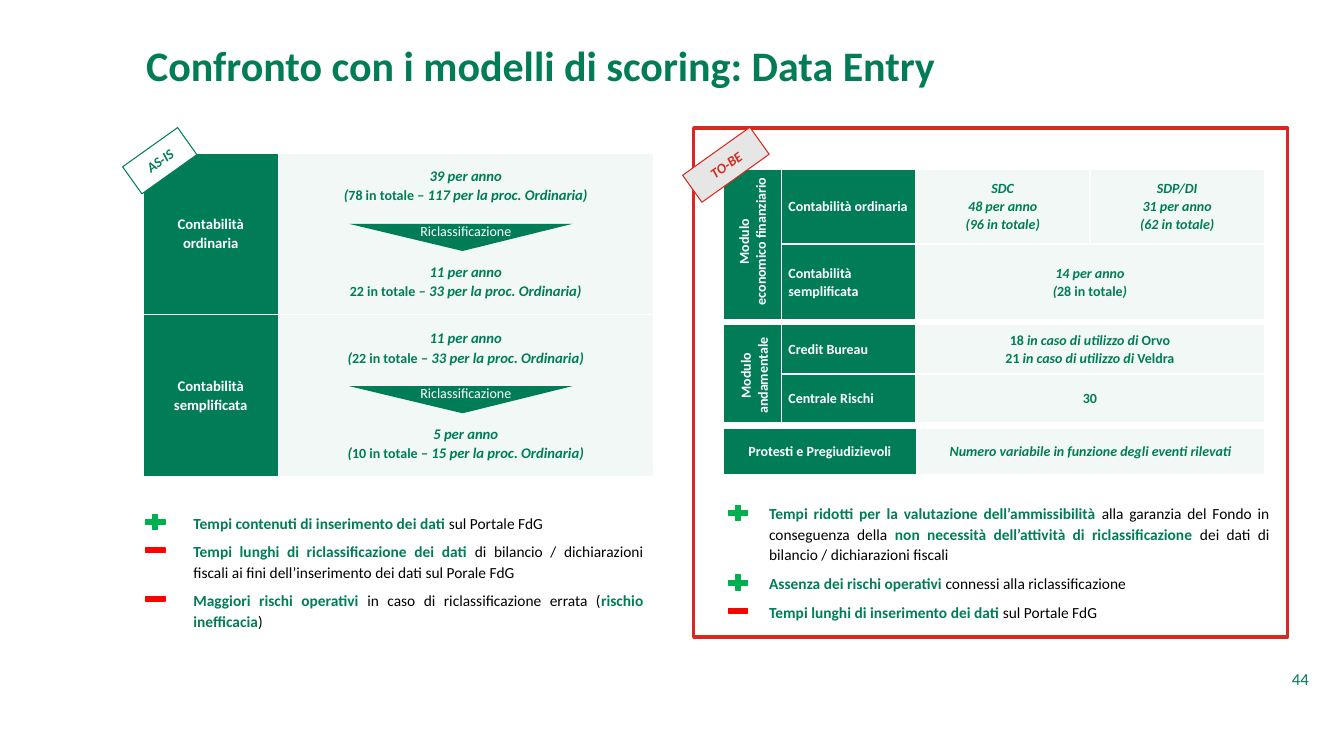
from lxml.etree import SubElement
from pptx import Presentation
from pptx.dml.color import RGBColor
from pptx.enum.shapes import MSO_SHAPE
from pptx.enum.text import MSO_ANCHOR, PP_ALIGN
from pptx.oxml.ns import qn
from pptx.util import Inches, Pt

RECTANGLE, TRIANGLE = MSO_SHAPE.RECTANGLE, MSO_SHAPE.ISOSCELES_TRIANGLE
PLUS, MINUS = MSO_SHAPE.MATH_PLUS, MSO_SHAPE.MATH_MINUS
TOP, MIDDLE, BOTTOM = MSO_ANCHOR.TOP, MSO_ANCHOR.MIDDLE, MSO_ANCHOR.BOTTOM
LEFT, CENTER = PP_ALIGN.LEFT, PP_ALIGN.CENTER
RIGHT, JUSTIFY = PP_ALIGN.RIGHT, PP_ALIGN.JUSTIFY

GREEN, WHITE, BLACK, RED = "007D57", "FFFFFF", "000000", "D52B1E"
THEME = {
    "font": "Calibri",
    "tag fill": "E7E6E6",
    "icons": {PLUS: "00B050", MINUS: "FF0000"},
    "tint": 5000,
    "styles": {
        "title": (30, GREEN, True, False),
        "page": (12, GREEN, False, False),
        "key": (11, GREEN, True, False),
        "body": (11, BLACK, False, False),
        "big head": (10.5, WHITE, True, False),
        "big value": (10.5, GREEN, True, True),
        "head": (10, WHITE, True, False),
        "value": (10, GREEN, True, True),
        "upright": (10, GREEN, True, False),
        "arrow": (10, WHITE, False, False),
        "as-is": (10, GREEN, True, True),
        "to-be": (10, RED, True, True),
    },
}

TITLE = "Confronto con i modelli di scoring: Data Entry"
PAGE = "44"


def lines(style, *texts):
    return [[(text, style)] for text in texts]


def yearly(before, total, after, open_mark="("):
    opening = [(open_mark, "big value")] if open_mark else []
    return [[(f"{before} per anno", "big value")],
            opening + [(f"{total} in totale ", "upright"),
                       (f"– {after} per la proc. Ordinaria)", "big value")]]


def usage(count, bureau):
    return [(count, "upright"), (" in caso di utilizzo di ", "value"), (bureau, "upright")]


TABLES = [
    {"at": (1.42, 1.51), "columns": (1.34, 3.72), "rows": (1.61, 1.61), "heads": 1,
     "head align": CENTER, "gap": 41, "merges": [],
     "cells": [
         [lines("big head", "Contabilità ordinaria"),
          yearly(39, 78, 117) + yearly(11, 22, 33, "")],
         [lines("big head", "Contabilità semplificata"),
          yearly(11, 22, 33) + yearly(5, 10, 15)]]},
    {"at": (7.17, 1.67), "columns": (0.58, 1.33, 1.73, 1.73), "rows": (0.75, 0.75), "heads": 2,
     "head align": LEFT, "gap": 0, "merges": [(0, 0, 1, 0), (1, 2, 1, 3)],
     "cells": [
         [[], lines("head", "Contabilità ordinaria"),
          lines("value", "SDC", "48 per anno", "(96 in totale)"),
          lines("value", "SDP/DI", "31 per anno", "(62 in totale)")],
         [[], lines("head", "Contabilità semplificata"),
          [[("14 per anno", "value")],
           [("(", "value"), ("28 in totale", "upright"), (")", "value")]], []]]},
    {"at": (7.17, 3.21), "columns": (0.58, 1.33, 3.46), "rows": (0.5, 0.48), "heads": 2,
     "head align": LEFT, "gap": 0, "merges": [(0, 0, 1, 0)],
     "cells": [
         [[], lines("head", "Credit Bureau"), [usage("18", "Orvo"), usage("21", "Veldra")]],
         [[], lines("head", "Centrale Rischi"), lines("upright", "30")]]},
    {"at": (7.17, 4.24), "columns": (1.92, 3.45), "rows": (0.47,), "heads": 1,
     "head align": CENTER, "gap": 0, "merges": [],
     "cells": [
         [lines("head", "Protesti e Pregiudizievoli"),
          lines("value", "Numero variabile in funzione degli eventi rilevati")]]},
]

PANELS = [
    ((7.13, 4.93, 5.56, 1.29), 7.19, [
        (PLUS, 4.99, [("Tempi ridotti per la valutazione dell’ammissibilità ", "key"),
                      ("alla garanzia del Fondo in conseguenza della ", "body"),
                      ("non necessità dell’attività di riclassificazione ", "key"),
                      ("dei dati di bilancio / dichiarazioni fiscali", "body")]),
        (PLUS, 5.68, [("Assenza dei rischi operativi ", "key"),
                      ("connessi alla riclassificazione", "body")]),
        (MINUS, 5.96, [("Tempi lunghi di inserimento dei dati ", "key"),
                       ("sul Portale FdG", "body")])]),
    ((1.42, 5.02, 5.06, 1.29), 1.41, [
        (PLUS, 5.08, [("Tempi contenuti di inserimento dei dati ", "key"),
                      ("sul Portale FdG", "body")]),
        (MINUS, 5.36, [("Tempi lunghi di riclassificazione dei dati ", "key"),
                       ("di bilancio / dichiarazioni fiscali ai fini dell’inserimento "
                        "dei dati sul Porale FdG", "body")]),
        (MINUS, 5.84, [("Maggiori rischi operativi ", "key"),
                       ("in caso di riclassificazione errata (", "body"),
                       ("rischio inefficacia", "key"), (")", "body")])]),
]

FRAME = (6.88, 1.27, 5.89, 5.05)
ARROWS = [("Riclassificazione", 2.22), ("Riclassificazione", 3.83)]
MODULES = [((7.29, 1.68, 0.34, 1.43), ("Modulo", "economico finanziario")),
           ((7.31, 3.3, 0.34, 0.85), ("Modulo", "andamentale"))]
TAGS = [("AS-IS", "as-is", (1.25, 1.43, 0.67, 0.33), WHITE, GREEN),
        ("TO-BE", "to-be", (6.79, 1.47, 0.82, 0.33), THEME["tag fill"], RED)]

presentation = Presentation()
presentation.slide_width, presentation.slide_height = Inches(13.33), Inches(7.5)
slide = presentation.slides.add_slide(presentation.slide_layouts[6])


def color(value):
    return RGBColor.from_string(value)


def write(frame, paragraphs, align, spacing=1.0, after=0, indent=0):
    for index, runs in enumerate(paragraphs):
        paragraph = frame.paragraphs[0] if index == 0 else frame.add_paragraph()
        paragraph.alignment, paragraph.line_spacing = align, spacing
        paragraph.space_after = Pt(after)
        if indent:
            properties = paragraph._p.get_or_add_pPr()
            properties.set("marL", str(Inches(indent)))
            properties.set("indent", "0")
        for text, style in runs:
            run = paragraph.add_run()
            run.text = text
            size, ink, run.font.bold, run.font.italic = THEME["styles"][style]
            run.font.name, run.font.size = THEME["font"], Pt(size)
            run.font.color.rgb = color(ink)


def add_text(box, paragraphs, align, anchor=TOP, spacing=1.0):
    shape = slide.shapes.add_textbox(*map(Inches, box))
    shape.text_frame.word_wrap = True
    shape.text_frame.vertical_anchor = anchor
    write(shape.text_frame, paragraphs, align, spacing)
    return shape


def add_shape(kind, box, fill=None, line=None, width=1, rotation=0):
    shape = slide.shapes.add_shape(kind, *map(Inches, box))
    shape.shadow.inherit = False
    shape.rotation = rotation
    if fill:
        shape.fill.solid()
        shape.fill.fore_color.rgb = color(fill)
    else:
        shape.fill.background()
    if line:
        shape.line.color.rgb, shape.line.width = color(line), Pt(width)
    else:
        shape.line.fill.background()
    return shape


def style_cell(cell, is_head, is_top):
    properties = cell._tc.get_or_add_tcPr()
    for side in "LRTB":
        width = 3 if side == "T" and is_top else 1
        border = SubElement(properties, qn(f"a:ln{side}"), w=str(Pt(width)))
        SubElement(SubElement(border, qn("a:solidFill")), qn("a:srgbClr"), val=WHITE)
    cell.fill.solid()
    cell.fill.fore_color.rgb = color(GREEN)
    if not is_head:
        fill_color = properties.find(qn("a:solidFill"))[0]
        SubElement(fill_color, qn("a:alpha"), val=str(THEME["tint"]))
    cell.vertical_anchor = MIDDLE
    cell.margin_left = cell.margin_right = Inches(0.07)
    cell.margin_top = cell.margin_bottom = 0


def add_table(data):
    columns, rows = data["columns"], data["rows"]
    box = (*data["at"], sum(columns), sum(rows))
    table = slide.shapes.add_table(len(rows), len(columns), *map(Inches, box)).table
    table.first_row = table.horz_banding = False
    for column, width in zip(table.columns, columns):
        column.width = Inches(width)
    for row, height in zip(table.rows, rows):
        row.height = Inches(height)
    for r, contents in enumerate(data["cells"]):
        for c, paragraphs in enumerate(contents):
            cell, is_head = table.cell(r, c), c < data["heads"]
            style_cell(cell, is_head, r == 0)
            write(cell.text_frame, paragraphs, data["head align"] if is_head else CENTER, 1.07)
            if data["gap"] and not is_head:
                cell.text_frame.paragraphs[2].space_before = Pt(data["gap"])
    for top, left, bottom, right in data["merges"]:
        table.cell(top, left).merge(table.cell(bottom, right))


add_text((1.35, 0.4, 11.42, 1.14), lines("title", TITLE), LEFT, spacing=0.9)

for box, icon_left, points in PANELS:
    panel = add_shape(RECTANGLE, box, WHITE, WHITE, 1.5)
    panel.text_frame.vertical_anchor = MIDDLE
    write(panel.text_frame, [runs for _, _, runs in points], JUSTIFY, 1.1, 6, 0.4)
    for icon, icon_top, _ in points:
        ink = THEME["icons"][icon]
        add_shape(icon, (icon_left, icon_top, 0.26, 0.2), ink, ink)

add_shape(RECTANGLE, FRAME, line=RED, width=2.25)
for data in TABLES:
    add_table(data)

for label, top in ARROWS:
    arrow = add_shape(TRIANGLE, (3.46, top, 2.22, 0.27), GREEN, rotation=180)
    arrow.adjustments[0] = 0.492
    add_text((2.96, top - 0.06, 3.32, 0.27), lines("arrow", label), CENTER)

for box, words in MODULES:
    module = add_text(box, lines("head", *words), CENTER)
    frame = module.text_frame
    frame.margin_left = frame.margin_right = frame.margin_top = frame.margin_bottom = 0
    module._element.txBody.bodyPr.set("vert", "vert270")

for label, style, box, fill, line in TAGS:
    tag = add_shape(RECTANGLE, box, fill, line, 0.75, 324.5)
    tag.text_frame.vertical_anchor = MIDDLE
    write(tag.text_frame, lines(style, label), CENTER)

add_text((12.11, 6.62, 0.97, 0.26), lines("page", PAGE), RIGHT, BOTTOM)
presentation.save("out.pptx")
